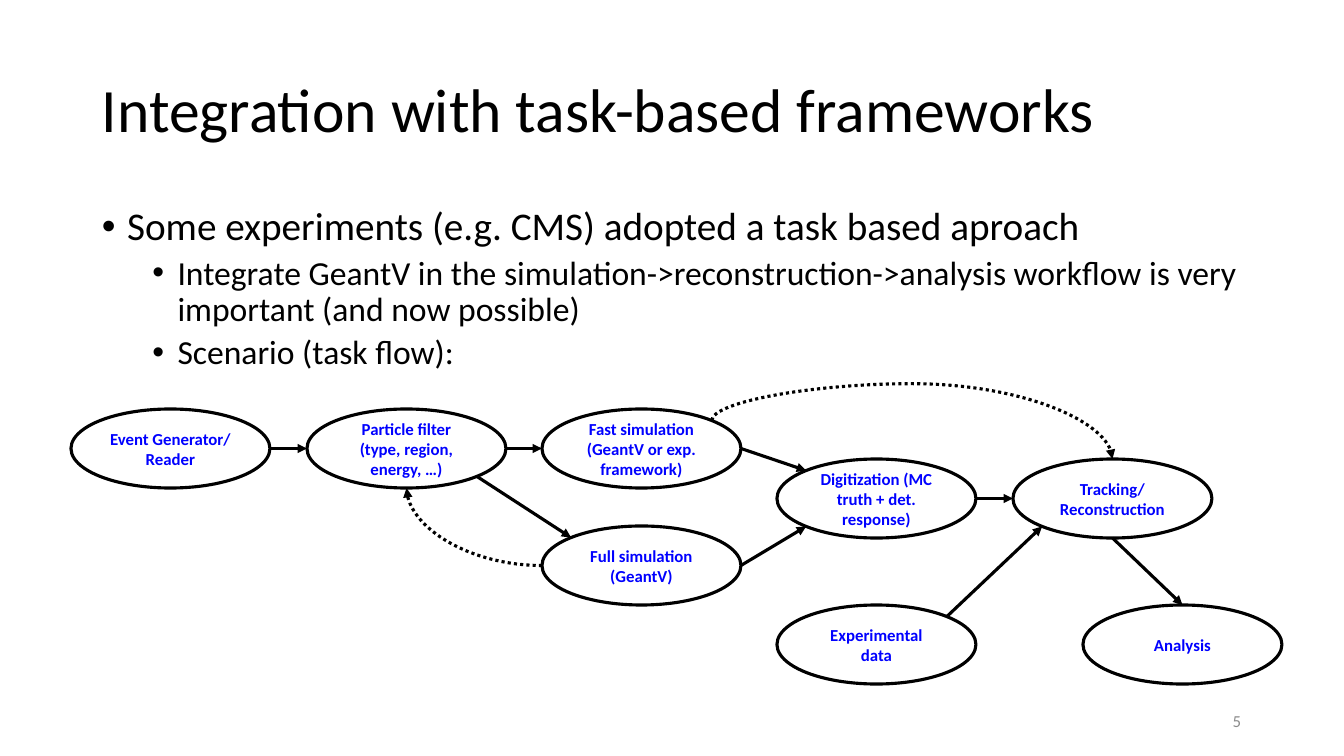
import math

import pptx
import pptx.dml.color
import pptx.enum.dml
import pptx.enum.shapes
import pptx.enum.text
import pptx.oxml.ns
import pptx.util
from lxml import etree

EMU_PER_PX = 914400 / 100.8
FONT = "Calibri"
COLORS = {"ink": "000000", "task": "0000FF", "number": "8C8C8C"}
TASK_WIDTH, TASK_HEIGHT = 199, 79
LINE_POINTS = 2.25

# name: (left, top, paragraphs)
TASKS = {
    "reader": (71, 409, ["Event Generator/", "Reader"]),
    "filter": (307, 409, ["Particle filter (type, region, energy, …)"]),
    "full": (542, 526, ["Full simulation", "(GeantV)"]),
    "fast": (542, 409, ["Fast simulation", "(GeantV or exp. framework)"]),
    "digitization": (777, 459, ["Digitization (MC truth + det. response)"]),
    "tracking": (1013, 459, ["Tracking/", "Reconstruction"]),
    "experiment": (777, 605, ["Experimental data"]),
    "analysis": (1083, 605, ["Analysis"]),
}

# source task, angle on its outline, target task, angle on its outline
RIGHT, LOWER_RIGHT, BOTTOM, LOWER_LEFT = 0, 45, 90, 135
LEFT, UPPER_LEFT, TOP, UPPER_RIGHT = 180, 225, 270, 315
FLOWS = [
    ("reader", RIGHT, "filter", LEFT),
    ("filter", RIGHT, "fast", LEFT),
    ("filter", LOWER_RIGHT, "full", UPPER_LEFT),
    ("fast", RIGHT, "digitization", UPPER_LEFT),
    ("full", RIGHT, "digitization", LOWER_LEFT),
    ("digitization", RIGHT, "tracking", LEFT),
    ("experiment", UPPER_RIGHT, "tracking", LOWER_LEFT),
    ("tracking", BOTTOM, "analysis", TOP),
]


def px(length):
    return pptx.util.Emu(round(length * EMU_PER_PX))


def rgb(name):
    return pptx.dml.color.RGBColor.from_string(COLORS[name])


def add_child(parent, tag, **attributes):
    child = etree.SubElement(parent, pptx.oxml.ns.qn(tag))
    for name, value in attributes.items():
        child.set(name, str(value))
    return child


def style_paragraph(paragraph, text, size, color, bold=False):
    paragraph.text = text
    paragraph.font.name = FONT
    paragraph.font.size = pptx.util.Pt(size)
    paragraph.font.bold = bold
    paragraph.font.color.rgb = rgb(color)


def add_text_frame(slide, left, top, width, height, middle=True):
    box = slide.shapes.add_textbox(px(left), px(top), px(width), px(height))
    frame = box.text_frame
    frame.word_wrap = True
    if middle:
        frame.vertical_anchor = pptx.enum.text.MSO_ANCHOR.MIDDLE
    return frame


def next_paragraph(frame, index):
    return frame.add_paragraph() if index else frame.paragraphs[0]


def add_title(slide, text):
    paragraph = add_text_frame(slide, 92, 40, 1159, 146).paragraphs[0]
    style_paragraph(paragraph, text, 44, "ink")
    paragraph.line_spacing = 0.9


def add_bullets(slide, items):
    """Write (level, text) pairs as a bulleted list with hanging indents."""
    frame = add_text_frame(slide, 92, 202, 1159, 193, middle=False)
    for index, (level, text) in enumerate(items):
        paragraph = next_paragraph(frame, index)
        style_paragraph(paragraph, text, 28 - 4 * level, "ink")
        paragraph.level = level
        paragraph.line_spacing = 0.9
        paragraph.space_before = pptx.util.Pt(5 if level else 10)
        properties = paragraph._p.get_or_add_pPr()
        properties.set("marL", str(pptx.util.Inches(0.25 + 0.5 * level)))
        properties.set("indent", str(pptx.util.Inches(-0.25)))
        bullet_font = properties.makeelement(
            pptx.oxml.ns.qn("a:buFont"), {"typeface": "Arial"})
        bullet = properties.makeelement(
            pptx.oxml.ns.qn("a:buChar"), {"char": "•"})
        run_defaults = properties.find(pptx.oxml.ns.qn("a:defRPr"))
        run_defaults.addprevious(bullet_font)
        run_defaults.addprevious(bullet)


def add_task(slide, left, top, lines):
    shape = slide.shapes.add_shape(
        pptx.enum.shapes.MSO_SHAPE.OVAL,
        px(left), px(top), px(TASK_WIDTH), px(TASK_HEIGHT))
    shape.shadow.inherit = False
    shape.fill.background()
    shape.line.color.rgb = rgb("ink")
    shape.line.width = pptx.util.Pt(LINE_POINTS)
    frame = shape.text_frame
    frame.word_wrap = True
    frame.vertical_anchor = pptx.enum.text.MSO_ANCHOR.MIDDLE
    for index, text in enumerate(lines):
        paragraph = next_paragraph(frame, index)
        style_paragraph(paragraph, text, 12, "task", bold=True)
        paragraph.alignment = pptx.enum.text.PP_ALIGN.CENTER


def outline_point(task, angle):
    """Return the point of a task's ellipse at an angle, clockwise from right."""
    left, top, _ = TASKS[task]
    radians = math.radians(angle)
    return (left + TASK_WIDTH / 2 * (1 + math.cos(radians)),
            top + TASK_HEIGHT / 2 * (1 + math.sin(radians)))


def add_arrow(slide, kind, start, end):
    arrow = slide.shapes.add_connector(
        kind, px(start[0]), px(start[1]), px(end[0]), px(end[1]))
    arrow.line.color.rgb = rgb("ink")
    arrow.line.width = pptx.util.Pt(LINE_POINTS)
    add_child(arrow.line._get_or_add_ln(), "a:tailEnd", type="triangle")
    add_child(arrow._element.spPr, "a:effectLst")
    return arrow


def add_feedback(slide, start, end, preset, rotation, flip=False, bend=None):
    """Draw a dotted curve whose preset path is turned by rotation degrees."""
    center_x, center_y = ((a + b) / 2 for a, b in zip(start, end))
    width, height = (abs(a - b) for a, b in zip(start, end))
    if rotation % 180:
        width, height = height, width
    arrow = add_arrow(
        slide, pptx.enum.shapes.MSO_CONNECTOR.CURVE,
        (center_x - width / 2, center_y - height / 2),
        (center_x + width / 2, center_y + height / 2))
    arrow.line.dash_style = pptx.enum.dml.MSO_LINE.ROUND_DOT
    properties = arrow._element.spPr
    transform = properties.find(pptx.oxml.ns.qn("a:xfrm"))
    transform.set("rot", str(rotation * 60000))
    if flip:
        transform.set("flipH", "1")
    geometry = properties.find(pptx.oxml.ns.qn("a:prstGeom"))
    geometry.set("prst", preset)
    if bend is not None:
        guides = geometry.find(pptx.oxml.ns.qn("a:avLst"))
        add_child(guides, "a:gd", name="adj1", fmla=f"val {round(bend * 100000)}")


def add_slide_number(slide, text):
    paragraph = add_text_frame(slide, 949, 701, 302, 40).paragraphs[0]
    style_paragraph(paragraph, text, 12, "number")
    paragraph.alignment = pptx.enum.text.PP_ALIGN.RIGHT


def main():
    presentation = pptx.Presentation()
    presentation.slide_width, presentation.slide_height = px(1344), px(756)
    slide = presentation.slides.add_slide(presentation.slide_layouts[6])
    add_title(slide, "Integration with task-based frameworks")
    add_bullets(slide, [
        (0, "Some experiments (e.g. CMS) adopted a task based aproach"),
        (1, "Integrate GeantV in the simulation->reconstruction->analysis "
            "workflow is very important (and now possible)"),
        (1, "Scenario (task flow):"),
    ])
    for left, top, lines in TASKS.values():
        add_task(slide, left, top, lines)
    for source, source_angle, target, target_angle in FLOWS:
        add_arrow(slide, pptx.enum.shapes.MSO_CONNECTOR.STRAIGHT,
                  outline_point(source, source_angle),
                  outline_point(target, target_angle))
    add_feedback(slide, outline_point("full", LEFT),
                 outline_point("filter", BOTTOM), "curvedConnector2", 180)
    add_feedback(slide, outline_point("fast", UPPER_RIGHT),
                 outline_point("tracking", TOP), "curvedConnector3", 270,
                 flip=True, bend=-0.96)
    add_slide_number(slide, "5")
    presentation.save("out.pptx")


if __name__ == "__main__":
    main()
